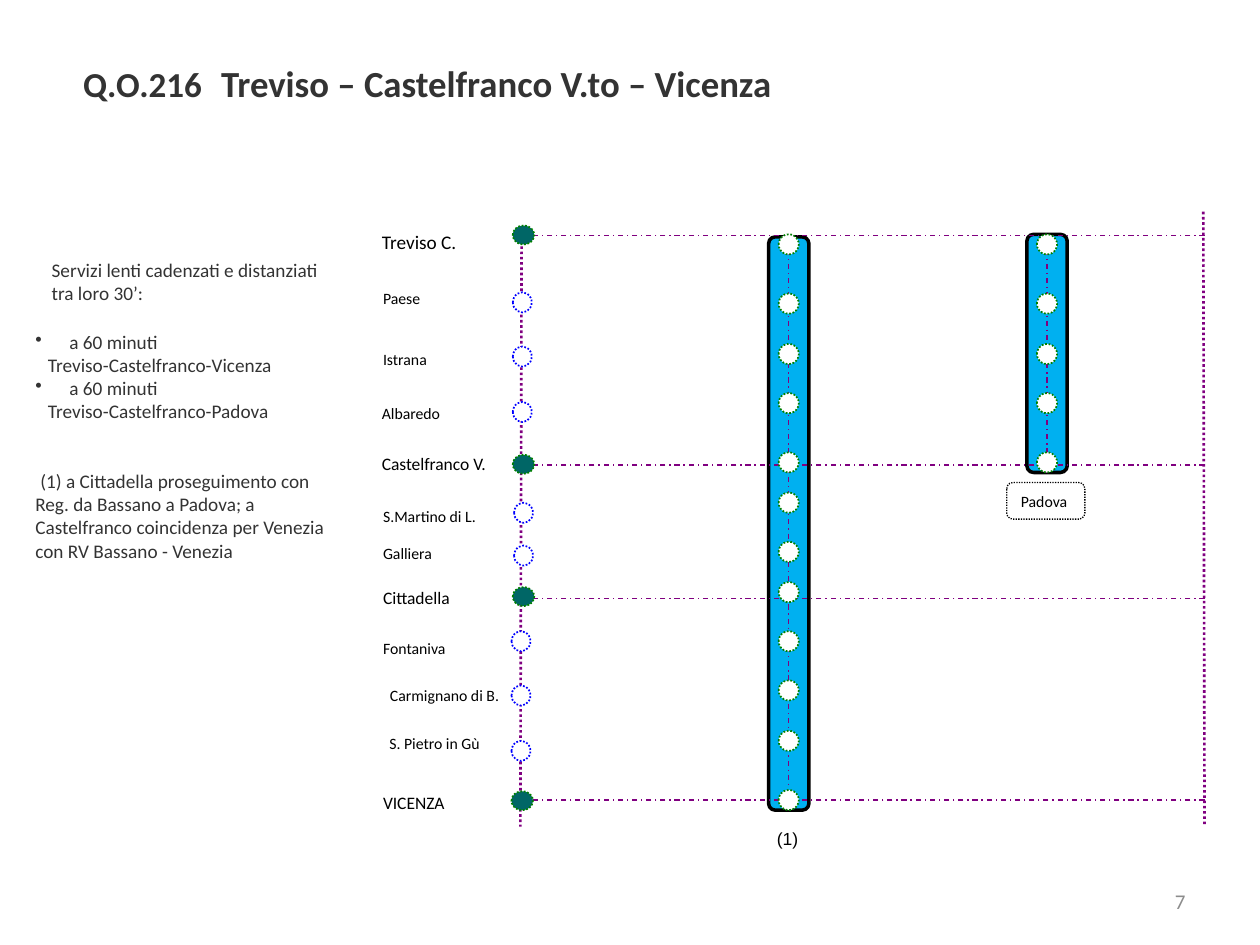
import lxml.etree
import pptx
import pptx.dml.color
import pptx.enum.dml
import pptx.enum.shapes
import pptx.enum.text
import pptx.oxml.ns
import pptx.util

Inches, Pt = pptx.util.Inches, pptx.util.Pt
RGBColor = pptx.dml.color.RGBColor
SHAPE = pptx.enum.shapes.MSO_SHAPE
DASH = pptx.enum.dml.MSO_LINE
ALIGN = pptx.enum.text.PP_ALIGN
ANCHOR = pptx.enum.text.MSO_ANCHOR
AUTO_SIZE = pptx.enum.text.MSO_AUTO_SIZE

BLACK = RGBColor(0x00, 0x00, 0x00)
WHITE = RGBColor(0xFF, 0xFF, 0xFF)
DARK_GREY = RGBColor(0x33, 0x33, 0x33)
PAGE_GREY = RGBColor(0x8C, 0x8C, 0x8C)
SERVICE_BLUE = RGBColor(0x00, 0xB0, 0xF0)
STOP_BLUE = RGBColor(0x00, 0x00, 0xFF)
HUB_TEAL = RGBColor(0x00, 0x66, 0x66)
GREEN = RGBColor(0x00, 0x80, 0x00)
PURPLE = RGBColor(0x80, 0x00, 0x80)


class Diagram:
    """Text style and the slide being drawn."""

    font_name = "Calibri"
    insets = {"margin_left": Inches(0.09), "margin_right": Inches(0.09),
              "margin_top": Inches(0.04), "margin_bottom": Inches(0.04)}

    def __init__(self, slide):
        self.slide = slide

    def apply(self, target, values):
        for name, value in values.items():
            setattr(target, name, value)

    def add_text(self, paragraph, text, size, color, **font):
        run = paragraph.add_run()
        run.text = text
        self.apply(run.font, {"name": self.font_name, "size": Pt(size), **font})
        run.font.color.rgb = color

    def text_box(self, left, top, width, height, **frame):
        box = self.slide.shapes.add_textbox(*map(Inches, (left, top, width, height)))
        self.apply(box.text_frame, {"word_wrap": True, "auto_size": AUTO_SIZE.SHAPE_TO_FIT_TEXT,
                                    **self.insets, **frame})
        return box.text_frame

    def bullet(self, paragraph):
        mark = lxml.etree.SubElement(paragraph._p.get_or_add_pPr(), pptx.oxml.ns.qn("a:buChar"))
        mark.set("char", "•")

    def indent(self, paragraph, left, first=0):
        properties = paragraph._p.get_or_add_pPr()
        properties.set("marL", str(Inches(left)))
        properties.set("indent", str(Inches(first)))

    def shape(self, kind, box, fill, line=None, weight=1, dash=None):
        shape = self.slide.shapes.add_shape(kind, *map(Inches, box))
        shape.shadow.inherit = False
        shape.fill.solid()
        shape.fill.fore_color.rgb = fill
        if line is None:
            shape.line.fill.background()
        else:
            shape.line.color.rgb = line
            self.apply(shape.line, {"width": Pt(weight), "dash_style": dash})
        return shape

    def line(self, x1, y1, x2, y2, weight=0.75, dash=DASH.DASH_DOT):
        line = self.slide.shapes.add_connector(
            pptx.enum.shapes.MSO_CONNECTOR.STRAIGHT, *map(Inches, (x1, y1, x2, y2)))
        line.line.color.rgb = PURPLE
        self.apply(line.line, {"width": Pt(weight), "dash_style": dash})
        lxml.etree.SubElement(line._element.spPr, pptx.oxml.ns.qn("a:effectLst"))

    def dot(self, left, top, width, height, fill, outline):
        self.shape(SHAPE.OVAL, (left, top, width, height), fill, outline, 1, DASH.ROUND_DOT)

    def caption(self, left, top, text, size, align, line=None, **font):
        tag = self.shape(SHAPE.ROUNDED_RECTANGLE, (left, top, 0.62, 0.29), WHITE,
                         line, 0.75, DASH.ROUND_DOT)
        self.apply(tag.text_frame, {"word_wrap": False, "vertical_anchor": ANCHOR.MIDDLE})
        paragraph = tag.text_frame.paragraphs[0]
        paragraph.alignment = align
        self.add_text(paragraph, text, size, BLACK, **font)


# name, label left, top, width, height, text size
STATIONS = [
    ("Treviso C.", 2.94, 1.72, 0.79, 0.34, 11),
    ("Paese", 2.95, 2.2, 0.59, 0.29, 9),
    ("Istrana", 2.95, 2.68, 0.53, 0.29, 9),
    ("Albaredo", 2.94, 3.11, 0.65, 0.29, 9),
    ("Castelfranco V.", 2.94, 3.5, 1.03, 0.32, 10),
    ("S.Martino di L.", 2.95, 3.93, 0.92, 0.29, 9),
    ("Galliera", 2.95, 4.22, 0.57, 0.29, 9),
    ("Cittadella", 2.95, 4.56, 1.26, 0.32, 10),
    ("Fontaniva", 2.95, 4.98, 0.68, 0.29, 9),
    ("Carmignano di B.", 2.97, 5.35, 1.08, 0.29, 9),
    ("S. Pietro in Gù", 3, 5.73, 1.53, 0.29, 9),
    ("VICENZA", 2.95, 6.19, 0.67, 0.3, 10),
]
RIGHT_ALIGNED = "Carmignano di B."
AXIS_STOPS = [(4.07, 2.32), (4.07, 2.75), (4.07, 3.19), (4.08, 3.99),
              (4.08, 4.33), (4.06, 5.01), (4.06, 5.44), (4.06, 5.88)]
AXIS_HUBS = [(4.07, 1.79), (4.07, 3.61), (4.07, 4.66), (4.06, 6.28)]
HUB_LINES = [1.87, 3.69, 4.75, 6.35]
SERVICE_STOPS = [1.86, 2.33, 2.73, 3.12, 3.59, 3.91, 4.3, 4.62, 5.01, 5.4, 5.8, 6.27]
# bar left, top, height, centre line x, bottom of centre line, dot left, number of stops
SERVICES = [(6.1, 1.88, 4.55, 6.26, 6.24, 6.18, 12),
            (8.15, 1.86, 1.89, 8.31, 3.75, 8.23, 5)]


def main():
    deck = pptx.Presentation()
    deck.slide_width, deck.slide_height = Inches(10), Inches(7.5)
    diagram = Diagram(deck.slides.add_slide(deck.slide_layouts[6]))

    # Title
    title = diagram.text_box(0.57, 0.4, 8.95, 0.49).paragraphs[0]
    for text, size in [("Q.O.216", 20), ("  ", 24), ("Treviso – Castelfranco V.to – Vicenza", 21)]:
        diagram.add_text(title, text, size, DARK_GREY, bold=True)

    # Service notes
    intro = diagram.text_box(0.32, 2.01, 2.47, 0.46).paragraphs[0]
    diagram.add_text(intro, "Servizi lenti cadenzati e distanziati tra loro 30’:", 11, DARK_GREY)
    notes = diagram.text_box(0.19, 2.58, 2.6, 2.31)
    note = notes.paragraphs[0]
    for route in ("Treviso-Castelfranco-Vicenza", "Treviso-Castelfranco-Padova"):
        diagram.add_text(note, "a 60 minuti", 11, DARK_GREY)
        diagram.indent(note, 0.27, -0.27)
        diagram.bullet(note)
        note = notes.add_paragraph()
        diagram.add_text(note, route, 11, DARK_GREY)
        diagram.indent(note, 0.1)
        note = notes.add_paragraph()
    note.space_before = Pt(26.8)
    diagram.indent(note, 0, 0.04)
    diagram.add_text(note, "(1) a Cittadella proseguimento con Reg. da Bassano a Padova; a "
                     "Castelfranco coincidenza per Venezia con RV Bassano - Venezia", 11, DARK_GREY)

    # Service bars
    for left, top, height, *_ in SERVICES:
        diagram.shape(SHAPE.ROUNDED_RECTANGLE, (left, top, 0.32, height), SERVICE_BLUE, BLACK, 2)

    # Station names
    for name, left, top, width, height, size in STATIONS:
        label = diagram.text_box(left, top, width, height, word_wrap=width > 1.2).paragraphs[0]
        label.line_spacing = 1.35
        label.alignment = ALIGN.RIGHT if name == RIGHT_ALIGNED else ALIGN.LEFT
        diagram.add_text(label, name, size, BLACK)

    # Axes and hub lines
    diagram.line(4.14, 1.83, 4.13, 6.56, 1.5, DASH.ROUND_DOT)
    diagram.line(9.55, 1.68, 9.56, 6.56, 1.5, DASH.ROUND_DOT)
    for y in HUB_LINES:
        diagram.line(9.56, y, 4.14, y)

    # Stations on the axis
    for left, top in AXIS_STOPS:
        diagram.dot(left, top, 0.15, 0.16, WHITE, STOP_BLUE)
    for left, top in AXIS_HUBS:
        diagram.dot(left, top, 0.17, 0.15, HUB_TEAL, GREEN)

    # Stops of each service
    for *_, centre, bottom, left, count in SERVICES:
        diagram.line(centre, 1.87, centre, bottom)
        for top in SERVICE_STOPS[:count]:
            diagram.dot(left, top, 0.16, 0.16, WHITE, GREEN)

    # Captions under the services
    diagram.caption(5.94, 6.51, "(1)", 10, ALIGN.CENTER, name="Arial")
    diagram.caption(7.99, 3.83, "Padova", 9, ALIGN.LEFT, BLACK)

    # Page number
    page = diagram.text_box(7.17, 6.95, 2.33, 0.4, auto_size=AUTO_SIZE.NONE,
                            vertical_anchor=ANCHOR.MIDDLE).paragraphs[0]
    page.alignment = ALIGN.RIGHT
    diagram.add_text(page, "7", 12, PAGE_GREY)

    deck.save("out.pptx")


if __name__ == "__main__":
    main()
